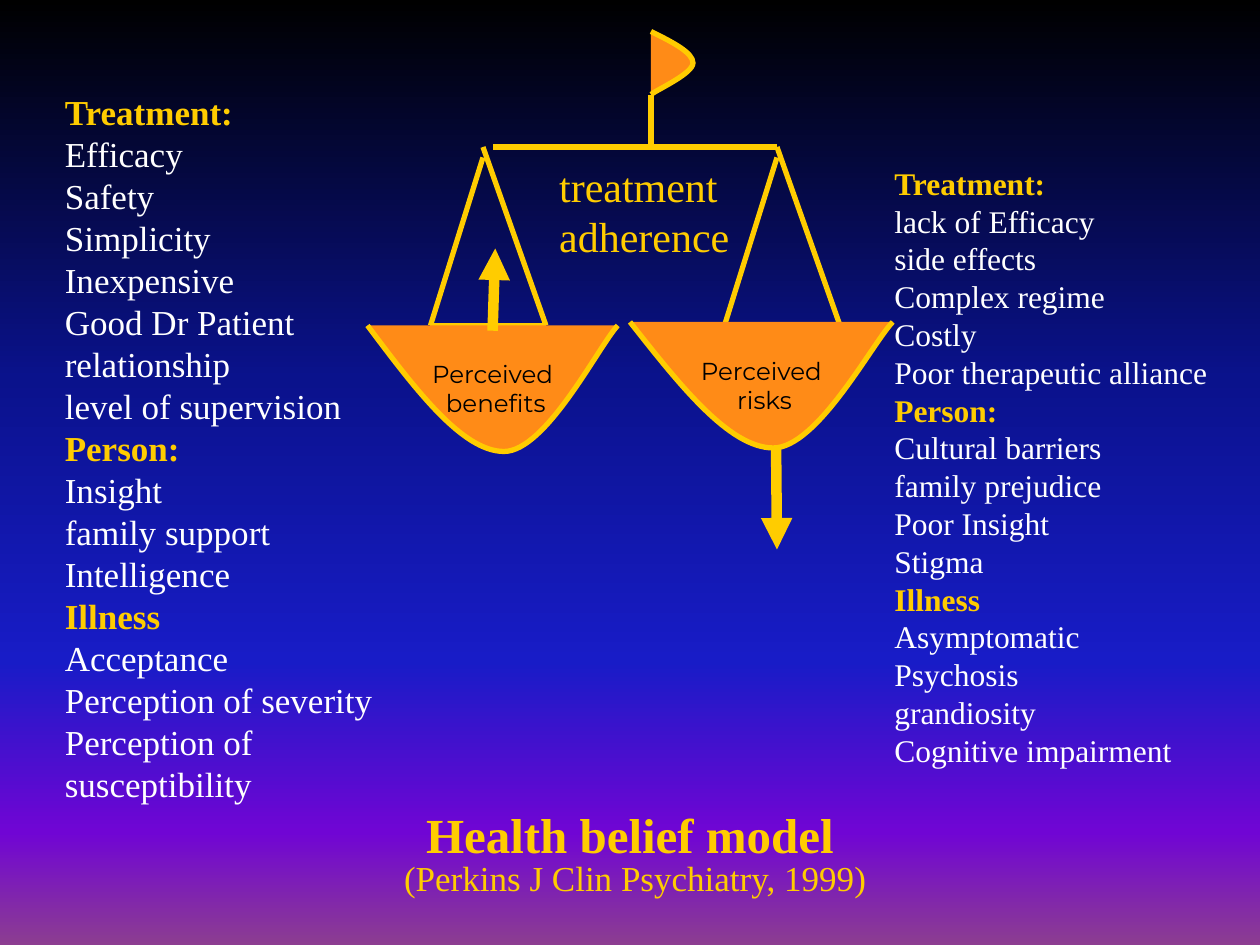
"""Build the health belief model slide with a balance of benefits and risks."""
from lxml import etree
from pptx import Presentation
from pptx.dml.color import RGBColor
from pptx.enum.shapes import MSO_CONNECTOR
from pptx.enum.text import MSO_ANCHOR, PP_ALIGN
from pptx.oxml.ns import qn
from pptx.util import Pt

STRAIGHT = MSO_CONNECTOR.STRAIGHT
MIDDLE = MSO_ANCHOR.MIDDLE
LEFT, CENTER = PP_ALIGN.LEFT, PP_ALIGN.CENTER
GOLD, ORANGE, WHITE, BLACK = "FFCC00", "FF8B17", "FFFFFF", "000000"
SERIF, SANS = "Times New Roman", "Montserrat"
color = RGBColor.from_string

deck = Presentation()
deck.slide_width, deck.slide_height = Pt(720), Pt(540)
slide = deck.slides.add_slide(deck.slide_layouts[6])
shapes = slide.shapes

back = slide.background.fill
back.gradient()
back.gradient_angle = 270
stops = slide.element.find(".//" + qn("a:gsLst"))
for stop in list(stops):
    stops.remove(stop)
for place, shade in [(0, BLACK), (40, "0A128C"), (70, "181CC7"),
                     (88, "7005D4"), (100, "8C3D91")]:
    stop = etree.SubElement(stops, qn("a:gs"), pos=str(place * 1000))
    etree.SubElement(stop, qn("a:srgbClr"), val=shade)


def draw(x1, y1, x2, y2, width=3, arrow=False):
    line = shapes.add_connector(STRAIGHT, Pt(x1), Pt(y1), Pt(x2), Pt(y2))
    line.line.color.rgb = color(GOLD)
    line.line.width = Pt(width)
    if arrow:
        etree.SubElement(line.line._get_or_add_ln(), qn("a:tailEnd"), type="triangle")
    etree.SubElement(line.element.spPr, qn("a:effectLst"))


def write(frame, lines, size, face, shade, bold=(), align=LEFT, lead=None):
    for i, text in enumerate(lines):
        para = frame.paragraphs[0] if i == 0 else frame.add_paragraph()
        para.alignment = align
        para.line_spacing = lead
        run = para.add_run()
        run.text = text
        font = run.font
        font.name, font.size = face, Pt(size)
        font.bold = text in bold
        font.color.rgb = color(GOLD if font.bold else shade)


draw(282, 84, 444, 84)
draw(372, 54, 372, 84)
for x in (276, 444):
    draw(x, 84, x + 36, 186)
    draw(x, 90, x - 30, 186)
    draw(x - 30, 186, x + 36, 186)

bowl = [(0, 0), (27, 36), (54, 72), (78, 72), (102, 72), (132, 12), (143, 0)]
flag = [(0, 0), (12, 6), (24, 12), (24, 18), (24, 24), (4, 33), (0, 36)]
for x, y, scale, curve, words in [
    (210, 186, 1, bowl, ["Perceived", " benefits"]),
    (360, 184, 1.05, bowl, ["Perceived", " risks"]),
    (372, 18, 1, flag, []),
]:
    points = [(Pt(x + dx * scale), Pt(y + dy)) for dx, dy in curve]
    pen = shapes.build_freeform(*points[0])
    pen.add_line_segments(points[1:], close=False)
    shape = pen.convert_to_shape()
    track = shape.element.find(".//" + qn("a:path"))
    legs = track.findall(qn("a:lnTo"))
    for i in range(0, len(legs), 3):
        bend = etree.SubElement(track, qn("a:cubicBezTo"))
        for leg in legs[i:i + 3]:
            bend.append(leg[0])
            track.remove(leg)
    shape.shadow.inherit = False
    shape.fill.solid()
    shape.fill.fore_color.rgb = color(ORANGE)
    shape.line.color.rgb = color(GOLD)
    shape.line.width = Pt(3)
    frame = shape.text_frame
    frame.word_wrap = False
    frame.vertical_anchor = MIDDLE
    write(frame, words, 14, SANS, BLACK, align=CENTER)

draw(443.5, 256, 444, 314, 6, True)
draw(281.5, 189, 283, 142, 6, True)

heads = ["Treatment:", "Person:", "Illness"]
gains = ["Treatment:", "Efficacy", "Safety", "Simplicity", "Inexpensive",
         "Good Dr Patient", "relationship", "level of supervision",
         "Person:", "Insight", "family support", "Intelligence",
         "Illness", "Acceptance", "Perception of severity",
         "Perception of susceptibility"]
risks = ["Treatment:", "lack of Efficacy", "side effects", "Complex regime",
         "Costly", "Poor therapeutic alliance",
         "Person:", "Cultural barriers", "family prejudice", "Poor Insight",
         "Stigma", "Illness", "Asymptomatic", "Psychosis", "grandiosity",
         "Cognitive impairment"]
title = "Health belief model"
for x, y, wide, high, lines, size, shade, bold, align in [
    (312.5, 88, 114, 66, ["treatment", "adherence"], 24, GOLD, [], LEFT),
    (504, 90, 200, 353, risks, 18, WHITE, heads, LEFT),
    (30, 48, 230, 410, gains, 20, WHITE, heads, LEFT),
    (230, 456, 260, 41, [title], 28, GOLD, [title], CENTER),
    (24, 486, 678, 31, ["(Perkins J Clin Psychiatry, 1999)"], 20, GOLD, [], CENTER),
]:
    frame = shapes.add_textbox(Pt(x), Pt(y), Pt(wide), Pt(high)).text_frame
    frame.word_wrap = True
    write(frame, lines, size, SERIF, shade, bold, align, Pt(size * 1.2))

deck.save("out.pptx")
